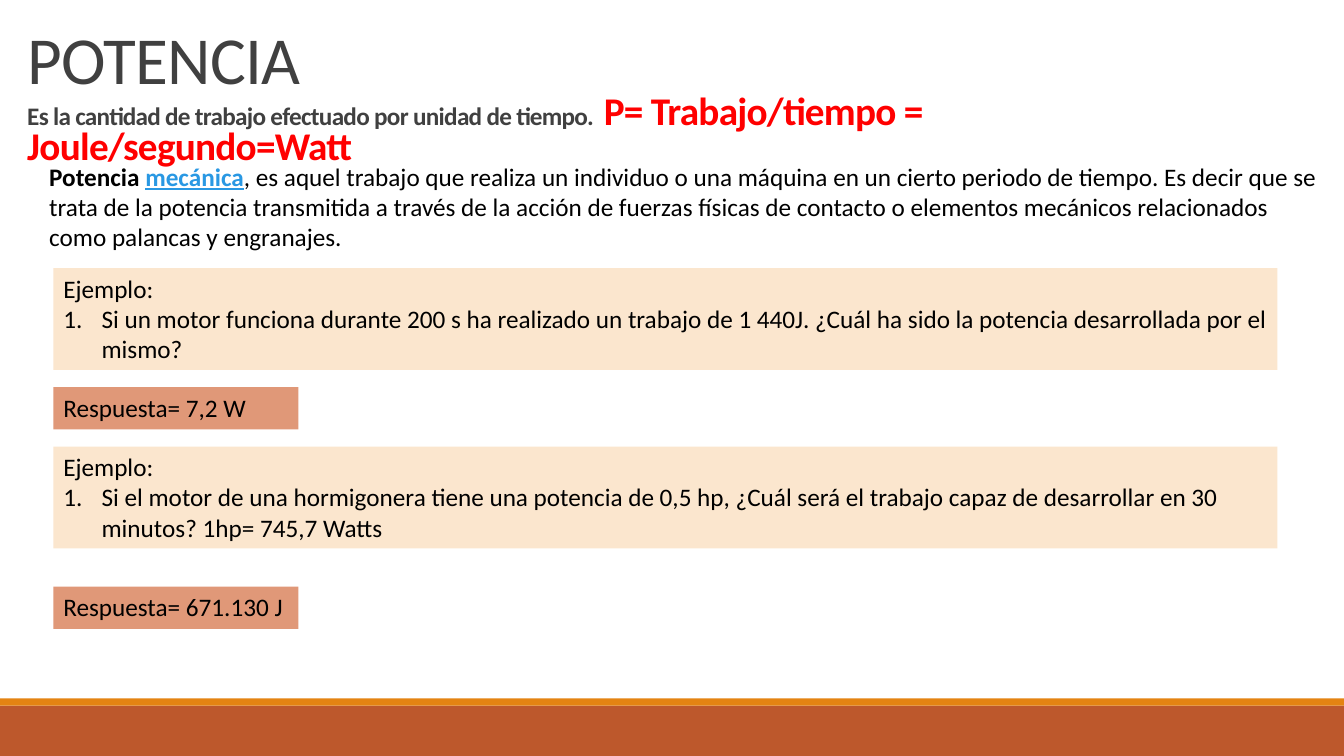
from pptx import Presentation
from pptx.dml.color import RGBColor
from pptx.enum.shapes import MSO_SHAPE
from pptx.enum.text import MSO_ANCHOR, PP_ALIGN
from pptx.oxml.xmlchemy import OxmlElement
from pptx.util import Inches, Pt

RECT = MSO_SHAPE.RECTANGLE
TOP = MSO_ANCHOR.TOP
LEFT = PP_ALIGN.LEFT
FONT = "Calibri"
HUES = {
    "rust": "BD582C", "amber": "E48312", "cream": "FBE6CE", "clay": "E09878",
    "gray": "404040", "red": "FF0000", "black": "000000", "link": "2998E3",
}


def style(run, size, hue, bold=False, line=False):
    """Format one run."""
    font = run.font
    font.name, font.size = FONT, Pt(size)
    font.bold, font.underline = bold, line
    font.color.rgb = RGBColor.from_string(HUES[hue])


def add_rect(slide, box, hue):
    """Draw a plain filled rectangle."""
    rect = slide.shapes.add_shape(RECT, *map(Inches, box))
    rect.shadow.inherit = False
    rect.fill.solid()
    rect.fill.fore_color.rgb = RGBColor.from_string(HUES[hue])
    rect.line.fill.background()
    return rect


def add_foot(slide, box):
    """Draw the two-tone band at the foot of the slide."""
    left, top, width, height = box
    edge = 0.07
    add_rect(slide, (left, top + edge, width, height - edge), "rust")
    add_rect(slide, (left, top, width, edge), "amber")


def add_title(slide, box):
    """Fill the title with its heading, definition and formula."""
    title = slide.shapes.title
    title.left, title.top, title.width, title.height = map(Inches, box)
    frame = title.text_frame
    frame.word_wrap, frame.vertical_anchor = True, TOP
    para = frame.paragraphs[0]
    para.text = "POTENCIA\vEs la cantidad de trabajo efectuado por unidad de tiempo.  "
    para.add_run().text = "P= Trabajo/tiempo = Joule/segundo=Watt"
    para.alignment, para.line_spacing = LEFT, 0.75
    looks = ((48, "gray", False), (18, "gray", True), (28, "red", True))
    for run, look in zip(para.runs, looks):
        style(run, *look)
        run.font._element.set("spc", "-50")


def add_intro(slide, box):
    """Write the paragraph on mechanical power."""
    frame = slide.shapes.add_textbox(*map(Inches, box)).text_frame
    frame.word_wrap = True
    para = frame.paragraphs[0]
    parts = (
        ("Potencia ", "black", True, False),
        ("mecánica", "link", True, True),
        (", es aquel trabajo que realiza un individuo o una máquina en un cierto "
         "periodo de tiempo. Es decir que se trata de la potencia transmitida a "
         "través de la acción de fuerzas físicas de contacto o elementos mecánicos "
         "relacionados como palancas y engranajes.", "black", False, False),
    )
    for text, hue, bold, line in parts:
        run = para.add_run()
        run.text = text
        style(run, 18, hue, bold, line)


def add_panel(slide, box, hue, text):
    """Write black text on a filled panel and return its paragraphs."""
    frame = add_rect(slide, box, hue).text_frame
    frame.word_wrap, frame.vertical_anchor = True, TOP
    frame.text = text
    for para in frame.paragraphs:
        para.alignment = LEFT
        style(para.runs[0], 18, "black")
    return frame.paragraphs


def number(para):
    """Turn a paragraph into a numbered item."""
    props = para._p.get_or_add_pPr()
    indent = Inches(0.38)
    props.set("marL", str(indent))
    props.set("indent", str(-indent))
    mark = OxmlElement("a:buAutoNum")
    mark.set("type", "arabicPeriod")
    props.append(mark)


def add_task(slide, box, gap, task, reply):
    """Place a worked example with its answer below it."""
    left, top, width, height = box
    paras = add_panel(slide, box, "cream", "Ejemplo:\n" + task)
    number(paras[1])
    spot = (left, top + height + gap, 2.43, 0.42)
    add_panel(slide, spot, "clay", "Respuesta= " + reply)


def main():
    """Build and save the slide."""
    deck = Presentation()
    deck.slide_width, deck.slide_height = Inches(13.33), Inches(7.5)
    slide = deck.slides.add_slide(deck.slide_layouts[5])
    add_foot(slide, (0, 6.93, 13.33, 0.57))
    add_title(slide, (0.17, 0.31, 12.03, 1.06))
    add_intro(slide, (0.39, 1.55, 12.8, 1.31))
    tasks = (
        (2.66, 0.17, "Si un motor funciona durante 200 s ha realizado un trabajo de "
         "1 440J. ¿Cuál ha sido la potencia desarrollada por el mismo?", "7,2 W"),
        (4.43, 0.38, "Si el motor de una hormigonera tiene una potencia de 0,5 hp, "
         "¿Cuál será el trabajo capaz de desarrollar en 30 minutos? "
         "1hp= 745,7 Watts", "671.130 J"),
    )
    for top, gap, task, reply in tasks:
        add_task(slide, (0.53, top, 12.14, 1.01), gap, task, reply)
    deck.save("out.pptx")


if __name__ == "__main__":
    main()
